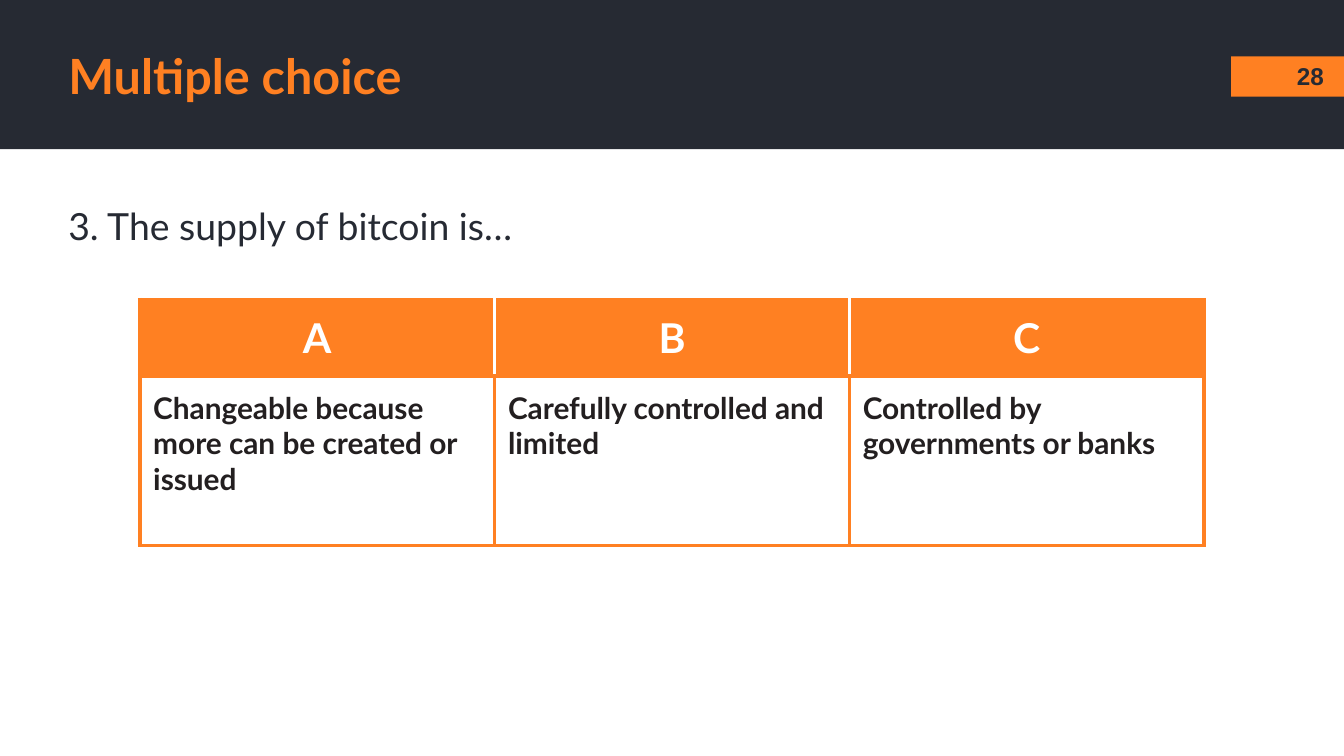
from pptx import Presentation
from pptx.dml.color import RGBColor
from pptx.enum.shapes import MSO_SHAPE as Shape
from pptx.enum.text import MSO_ANCHOR as Anchor, PP_ALIGN as Align
from pptx.oxml import parse_xml
from pptx.oxml.ns import nsdecls
from pptx.util import Inches, Pt

ORANGE, NAVY, BLACK, WHITE = "FF8022", "262A33", "231F20", "FFFFFF"
MARGIN = Inches(0.1)
BORDER = Pt(2.25)


def color(value):
    return RGBColor.from_string(value)


def style_text(frame, text, size, ink, bold=False, align=Align.LEFT, font="Lato"):
    frame.text = text
    para = frame.paragraphs[0]
    para.alignment = align
    for span in para.runs:
        span.font.name = font
        span.font.size = Pt(size)
        span.font.bold = bold
        span.font.color.rgb = color(ink)


def add_bar(page, left, top, width, height, fill):
    bar = page.shapes.add_shape(
        Shape.RECTANGLE, Inches(left), Inches(top), Inches(width), Inches(height))
    bar.shadow.inherit = False
    bar.fill.solid()
    bar.fill.fore_color.rgb = color(fill)
    bar.line.fill.background()


def add_text(page, left, top, width, height, text, size, ink,
             anchor=Anchor.MIDDLE, **style):
    box = page.shapes.add_textbox(
        Inches(left), Inches(top), Inches(width), Inches(height))
    frame = box.text_frame
    frame.word_wrap = True
    frame.vertical_anchor = anchor
    frame.margin_left = frame.margin_right = MARGIN
    frame.margin_top = frame.margin_bottom = MARGIN
    style_text(frame, text, size, ink, **style)


def set_borders(cell, left, right, top, bottom):
    # Border lines come before the fill in the cell properties
    properties = cell._tc.get_or_add_tcPr()
    sides = zip("LRTB", (left, right, top, bottom))
    for index, (side, ink) in enumerate(sides):
        properties.insert(index, parse_xml(
            f'<a:ln{side} {nsdecls("a")} w="{BORDER}"><a:solidFill>'
            f'<a:srgbClr val="{ink}"/></a:solidFill></a:ln{side}>'))


def add_header(page, left, top, width, height, title, number):
    add_bar(page, left, top, width, height, NAVY)
    add_bar(page, left + width - 0.84, top + 0.42, 0.84, 0.3, ORANGE)
    add_text(page, left + 0.41, top + 0.28, 8.74, 0.56, title, 26, ORANGE, bold=True)
    add_text(page, left + width - 0.51, top + 0.44, 0.52, 0.25, number, 13, NAVY,
             bold=True, align=Align.CENTER, font="Arial")


def add_choices(page, left, top, width, row_heights, choices):
    last = len(choices) - 1
    holder = page.shapes.add_table(
        2, len(choices), Inches(left), Inches(top),
        Inches(width), Inches(sum(row_heights)))
    table = holder.table
    table.horz_banding = False
    for row, height in zip(table.rows, row_heights):
        row.height = Inches(height)

    for index, (letter, answer) in enumerate(choices):
        table.columns[index].width = Inches(width / len(choices))
        head, body = table.cell(0, index), table.cell(1, index)
        for cell, fill in ((head, ORANGE), (body, WHITE)):
            cell.margin_left = cell.margin_right = MARGIN
            cell.margin_top = cell.margin_bottom = MARGIN
            cell.fill.solid()
            cell.fill.fore_color.rgb = color(fill)
        style_text(head.text_frame, letter, 22, WHITE, bold=True, align=Align.CENTER)
        style_text(body.text_frame, answer, 16, BLACK, bold=True)
        # White dividers between letters, orange everywhere else
        set_borders(head, WHITE if index else ORANGE,
                    WHITE if index < last else ORANGE, ORANGE, ORANGE)
        set_borders(body, ORANGE, ORANGE, ORANGE, ORANGE)


def main():
    # Widescreen page, 16 to 9
    deck = Presentation()
    deck.slide_width = Inches(10)
    deck.slide_height = Inches(10 * 9 / 16)
    page = deck.slides.add_slide(deck.slide_layouts[6])

    # Header band with title and page number
    add_header(page, 0, 0, 10, 1.11, "Multiple choice", "28")

    # Question and its answers
    add_text(page, 0.41, 1.41, 8.38, 1.28, "3. The supply of bitcoin is…", 20, NAVY,
             anchor=Anchor.TOP)
    add_choices(page, 1.04, 2.23, 7.92, (0.57, 1.26), [
        ("A", "Changeable because more can be created or issued"),
        ("B", "Carefully controlled and limited"),
        ("C", "Controlled by governments or banks"),
    ])
    deck.save("out.pptx")


if __name__ == "__main__":
    main()
